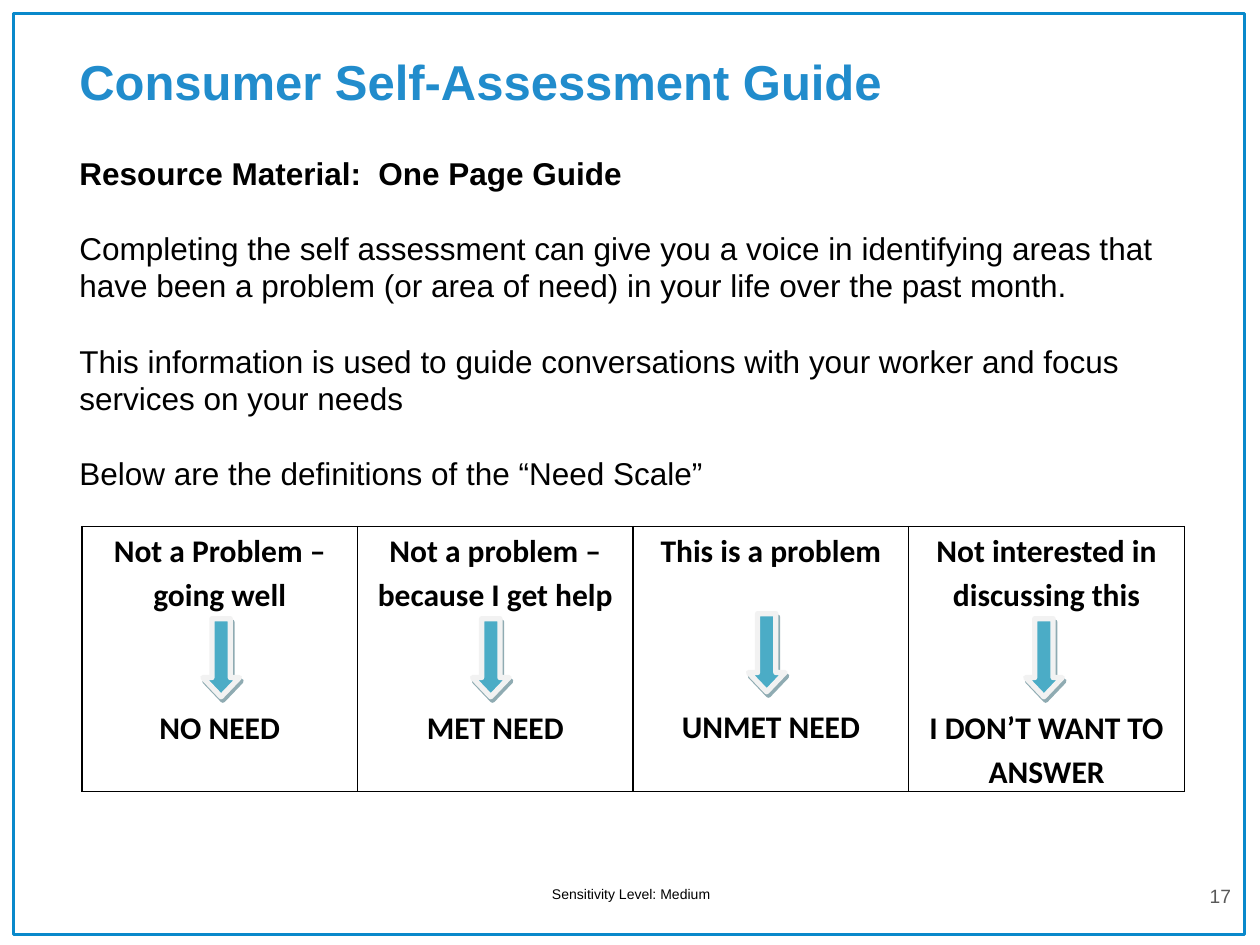
from lxml import etree
from pptx import Presentation
from pptx.dml.color import RGBColor
from pptx.enum.shapes import MSO_SHAPE
from pptx.enum.text import MSO_ANCHOR, MSO_AUTO_SIZE, PP_ALIGN
from pptx.oxml import parse_xml
from pptx.oxml.ns import nsdecls, qn
from pptx.util import Inches, Pt

RECTANGLE, DOWN_ARROW = MSO_SHAPE.RECTANGLE, MSO_SHAPE.DOWN_ARROW
LEFT, CENTER = PP_ALIGN.LEFT, PP_ALIGN.CENTER
MIDDLE, TOP = MSO_ANCHOR.MIDDLE, MSO_ANCHOR.TOP
NO_AUTOFIT = MSO_AUTO_SIZE.NONE

COLORS = {
    "text": "000000",
    "title": "218CCC",
    "frame": "0989CB",
    "page_number": "595959",
    "arrow": "4BACC6",
    "arrow_edge": "F2F2F2",
    "arrow_shadow": "205867",
}

BODY = [
    "Resource Material:  One Page Guide",
    "Completing the self assessment can give you a voice in identifying areas "
    "that have been a problem (or area of need) in your life over the past month.",
    "This information is used to guide conversations with your worker and focus "
    "services on your needs",
    "Below are the definitions of the “Need Scale”",
]
BODY_LINE = 21.5

# Answer, need level, blank lines between them, left and top of the arrow
NEED_SCALE = [
    ("Not a Problem – going well", "NO NEED", 2, 1.61, 4.91),
    ("Not a problem – because I get help", "MET NEED", 2, 3.75, 4.91),
    ("This is a problem", "UNMET NEED", 3, 5.94, 4.87),
    ("Not interested in discussing this", "I DON’T WANT TO ANSWER", 2, 8.14, 4.91),
]
CELL_LINE = 25.2


def color(name):
    return RGBColor.from_string(COLORS[name])


def place(shape, left, top, width, height):
    shape.left, shape.top = Inches(left), Inches(top)
    shape.width, shape.height = Inches(width), Inches(height)


def style(para, size, color_name="text", name="Arial", bold=False, align=LEFT):
    para.alignment = align
    font = para.font
    font.name, font.size, font.bold = name, Pt(size), bold
    font.color.rgb = color(color_name)


def add_title(page):
    title = page.shapes.title
    place(title, 0.53, 0.29, 7.9, 0.71)
    frame = title.text_frame
    frame.text = "Consumer Self-Assessment Guide"
    frame.auto_size, frame.vertical_anchor = NO_AUTOFIT, MIDDLE
    style(frame.paragraphs[0], 28, "title", bold=True)


def add_body(page):
    body = page.placeholders[1]
    place(body, 0.53, 1.17, 8.98, 3.29)
    frame = body.text_frame
    frame.text = "\n".join(BODY)
    frame.auto_size, frame.vertical_anchor = NO_AUTOFIT, TOP
    for index, para in enumerate(frame.paragraphs):
        properties = para._p.get_or_add_pPr()
        properties.set("marL", "0")
        properties.set("indent", "0")
        etree.SubElement(properties, qn("a:buNone"))
        para.line_spacing = Pt(BODY_LINE)
        para.space_before = Pt(BODY_LINE if index else 0)
        style(para, 18, bold=index == 0)


def add_label(page, text, bounds, size, color_name, anchor):
    box = page.shapes.add_textbox(*map(Inches, bounds))
    frame = box.text_frame
    frame.text = text
    frame.vertical_anchor = anchor
    style(frame.paragraphs[0], size, color_name, align=CENTER)


def add_frame(page):
    frame = page.shapes.add_shape(RECTANGLE, *map(Inches, (0.11, 0.11, 9.77, 7.31)))
    frame.shadow.inherit = False
    frame.fill.background()
    frame.line.color.rgb = color("frame")
    frame.line.width = Pt(1.75)


def add_cell_borders(cell):
    properties = cell._tc.get_or_add_tcPr()
    for index, side in enumerate(("lnL", "lnR", "lnT", "lnB")):
        properties.insert(index, parse_xml(
            f'<a:{side} {nsdecls("a")} w="{Pt(1)}"><a:solidFill>'
            f'<a:srgbClr val="{COLORS["text"]}"/></a:solidFill></a:{side}>'))


def add_need_table(page):
    bounds = map(Inches, (0.65, 4.18, 8.75, 2.07))
    table = page.shapes.add_table(1, len(NEED_SCALE), *bounds).table
    table.first_row = table.horz_banding = False
    for cell, (answer, need, blank_lines, *_) in zip(table.rows[0].cells, NEED_SCALE):
        cell.fill.background()
        add_cell_borders(cell)
        cell.margin_left = cell.margin_right = Inches(0.07)
        cell.margin_top = cell.margin_bottom = 0
        cell.text = f"{answer}\n{need}"
        for para in cell.text_frame.paragraphs:
            para.line_spacing = 1.15
            style(para, 18, name="Calibri", bold=True, align=CENTER)
        cell.text_frame.paragraphs[1].space_before = Pt(blank_lines * CELL_LINE)


def add_arrow(page, left, top):
    arrow = page.shapes.add_shape(DOWN_ARROW, *map(Inches, (left, top, 0.29, 0.62)))
    arrow.adjustments[0], arrow.adjustments[1] = 0.5, 0.525
    arrow.fill.solid()
    arrow.fill.fore_color.rgb = color("arrow")
    arrow.line.color.rgb = color("arrow_edge")
    arrow.line.width = Pt(3)
    arrow.shadow.inherit = False
    effects = arrow._element.spPr.find(qn("a:effectLst"))
    effects.append(parse_xml(
        f'<a:outerShdw {nsdecls("a")} dist="{Pt(2.2)}" dir="{63 * 60000}" '
        f'algn="ctr" rotWithShape="0"><a:srgbClr val="{COLORS["arrow_shadow"]}">'
        '<a:alpha val="50000"/></a:srgbClr></a:outerShdw>'))


def main():
    deck = Presentation()
    deck.slide_width, deck.slide_height = Inches(10), Inches(7.5)
    page = deck.slides.add_slide(deck.slide_layouts[1])
    add_title(page)
    add_body(page)
    add_frame(page)
    add_need_table(page)
    for *_, left, top in NEED_SCALE:
        add_arrow(page, left, top)
    add_label(page, "Sensitivity Level: Medium", (4.27, 6.98, 1.48, 0.24), 8, "text", TOP)
    add_label(page, "17", (9.32, 6.91, 0.73, 0.4), 11, "page_number", MIDDLE)
    deck.save("out.pptx")


if __name__ == "__main__":
    main()
